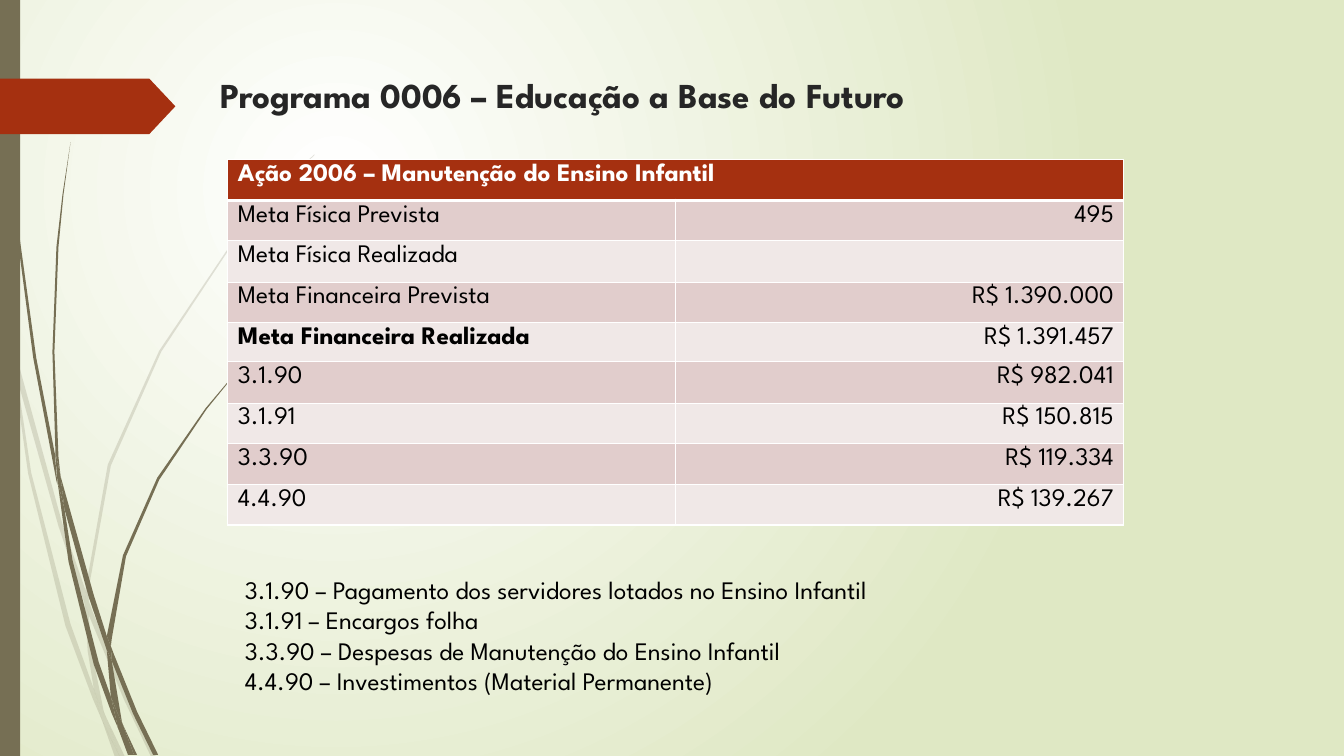
from pptx import Presentation
from pptx.dml.color import RGBColor
from pptx.enum.shapes import MSO_SHAPE as SHAPE
from pptx.enum.text import MSO_ANCHOR as ANCHOR, MSO_AUTO_SIZE as AUTO_SIZE, PP_ALIGN as ALIGN
from pptx.oxml.ns import qn
from pptx.util import Pt
from lxml import etree

PX = 9144  # 100 px to the inch
FONT = "League Spartan"
COLORS = {
    "white": "FFFFFF", "pale green": "DFE8C4", "olive": "766F54", "rust": "A53010",
    "title": "262626", "black": "000000", "band dark": "E1CDCC", "band light": "F0E8E7",
}


def write(para, text, color, size=18, bold=False, align=ALIGN.LEFT):
    para.alignment = align
    span = para.add_run()
    span.text = text
    span.font.color.rgb = RGBColor.from_string(COLORS[color])
    for name, value in {"name": FONT, "size": Pt(size), "bold": bold}.items():
        setattr(span.font, name, value)


def paint(shape, color):
    shape.shadow.inherit = False
    shape.fill.solid()
    shape.fill.fore_color.rgb = RGBColor.from_string(COLORS[color])
    shape.line.fill.background()


deck = Presentation()
deck.slide_width, deck.slide_height = 12192000, 750 * PX
page = deck.slides.add_slide(deck.slide_layouts[5])

# Background: white glow fading to pale green
backdrop = page.background.fill
backdrop.gradient()
for stop, color in zip(backdrop.gradient_stops, ("white", "pale green")):
    stop.color.rgb = RGBColor.from_string(COLORS[color])
gradient = next(page.element.iter(qn("a:gradFill")))
gradient.remove(gradient.find(qn("a:lin")))
glow = etree.SubElement(gradient, qn("a:path"), path="circle")
etree.SubElement(glow, qn("a:fillToRect"), l="50000", t="50000", r="100000", b="100000")

# Grass: each tuft is made of leaf pieces, given as outline corners
faint_tuft = [
    [(11, 350), (9, 322), (0, 282), (0, 299), (10, 344)],
    [(58, 522), (84, 599), (85, 586), (62, 520), (14, 345), (17, 376)],
    [(92, 607), (88, 596), (88, 610), (123, 694), (150, 751), (155, 751), (127, 692)],
    [(119, 751), (124, 751), (105, 711)],
    [(93, 683), (70, 619), (31, 469), (17, 376), (11, 350), (28, 470), (65, 621), (92, 693),
     (101, 714), (99, 707)],
    [(84, 599), (87, 646), (93, 683), (96, 692), (105, 711), (103, 706), (91, 646), (88, 610),
     (88, 608)],
    [(88, 584), (110, 462), (160, 349), (229, 245), (268, 198), (290, 175), (312, 154),
     (312, 153), (289, 175), (268, 197), (228, 244), (158, 348), (107, 461), (85, 584),
     (85, 586), (88, 596)],
    [(101, 714), (114, 751), (119, 751)],
    [(88, 608), (88, 610), (88, 596), (85, 586), (84, 599)],
    [(96, 692), (93, 683), (99, 707), (101, 714), (119, 751), (105, 711)],
]
dark_tuft = [
    [(7, 110), (17, 233), (33, 355), (56, 477), (57, 481), (55, 457), (55, 453), (36, 355),
     (19, 232), (8, 109), (5, 48), (4, 0), (3, 0), (4, 48)],
    [(88, 592), (106, 645), (106, 633), (106, 631), (93, 590), (60, 472), (64, 505)],
    [(113, 649), (110, 641), (111, 656), (132, 708), (152, 749), (157, 749), (136, 706)],
    [(110, 691), (98, 657), (72, 556), (64, 505), (57, 477), (68, 557), (93, 659), (111, 708),
     (117, 722), (116, 717)],
    [(60, 472), (58, 453), (54, 349), (58, 245), (63, 193), (70, 141), (62, 193), (56, 245),
     (52, 349), (55, 449)],
    [(133, 749), (136, 749), (122, 719)],
    [(57, 477), (64, 505), (60, 472), (55, 449), (55, 453)],
    [(111, 633), (125, 552), (158, 476), (205, 406), (231, 374), (245, 359), (261, 344),
     (260, 344), (245, 358), (231, 373), (204, 405), (156, 474), (122, 551), (106, 631),
     (110, 641)],
    [(117, 722), (127, 749), (131, 749)],
    [(106, 645), (110, 691), (116, 706), (122, 719), (121, 716), (111, 656), (109, 651)],
    [(106, 645), (109, 651), (111, 656), (110, 641), (106, 631), (106, 633)],
    [(116, 706), (110, 691), (116, 717), (117, 722), (130, 749), (133, 749), (122, 719)],
]
for opacity, tuft in ((20, faint_tuft), (100, dark_tuft)):
    group = page.shapes.add_group_shape()
    for corners in tuft:
        builder = group.shapes.build_freeform(*corners[0], scale=PX)
        builder.add_line_segments(corners[1:], close=True)
        leaf = builder.convert_to_shape()
        paint(leaf, "olive")
        if opacity < 100:
            tint = leaf.element.spPr.find(qn("a:solidFill"))[0]
            etree.SubElement(tint, qn("a:alpha"), val=str(opacity * 1000))

# Side bar and arrow
bar = page.shapes.add_shape(SHAPE.RECTANGLE, 0, 0, 20 * PX, 750 * PX)
paint(bar, "olive")
arrow = page.shapes.add_shape(SHAPE.PENTAGON, 0, 78 * PX, 174 * PX, 55 * PX)
arrow.adjustments[0] = 0.47
paint(arrow, "rust")

# Title
title = page.shapes.title
for name, value in {"left": 209, "top": 68, "width": 1049, "height": 69}.items():
    setattr(title, name, value * PX)
frame = title.text_frame
for name, value in {"word_wrap": True, "auto_size": AUTO_SIZE.NONE,
                    "vertical_anchor": ANCHOR.TOP}.items():
    setattr(frame, name, value)
write(frame.paragraphs[0], "Programa 0006 – Educação a Base do Futuro", "title", 25, True)

# Goals table
goals = [
    ("Ação 2006 – Manutenção do Ensino Infantil", ""),
    ("Meta Física Prevista", "495"),
    ("Meta Física Realizada", ""),
    ("Meta Financeira Prevista", "R$ 1.390.000"),
    ("Meta Financeira Realizada", "R$ 1.391.457"),
    ("3.1.90", "R$ 982.041"),
    ("3.1.91", "R$ 150.815"),
    ("3.3.90", "R$ 119.334"),
    ("4.4.90", "R$ 139.267"),
]
row_heights = [41, 40, 41, 40, 39, 41, 40, 41, 40]
table = page.shapes.add_table(len(goals), 2, 226 * PX, 158 * PX, 889 * PX,
                              sum(row_heights) * PX).table
table.cell(0, 0).merge(table.cell(0, 1))
for row, (texts, height) in enumerate(zip(goals, row_heights)):
    table.rows[row].height = height * PX
    band = "rust" if row == 0 else "band dark" if row % 2 else "band light"
    for column, text in enumerate(texts):
        cell = table.cell(row, column)
        cell.fill.solid()
        cell.fill.fore_color.rgb = RGBColor.from_string(COLORS[band])
        para = cell.text_frame.paragraphs[0]
        para.line_spacing = 0.9
        if text:
            write(para, text, "black" if row else "white",
                  bold=column == 0 and row in (0, 4),
                  align=ALIGN.RIGHT if column else ALIGN.LEFT)
        widths = {"lnL": 1, "lnR": 1, "lnT": 3 if row == 1 else 1, "lnB": 1 if row else 3}
        for index, (side, width) in enumerate(widths.items()):
            border = etree.Element(qn(f"a:{side}"), w=str(Pt(width)))
            stroke = etree.SubElement(border, qn("a:solidFill"))
            etree.SubElement(stroke, qn("a:srgbClr"), val=COLORS["white"])
            cell._tc.get_or_add_tcPr().insert(index, border)

# Legend of expense codes
legend = [
    "3.1.90 – Pagamento dos servidores lotados no Ensino Infantil",
    "3.1.91 – Encargos folha",
    "3.3.90 – Despesas de Manutenção do Ensino Infantil",
    "4.4.90 – Investimentos (Material Permanente)",
]
box = page.shapes.add_textbox(233 * PX, 565 * PX, 881 * PX, 131 * PX)
box.text_frame.word_wrap = True
box.text_frame.auto_size = AUTO_SIZE.SHAPE_TO_FIT_TEXT
for index, line in enumerate(legend):
    para = box.text_frame.add_paragraph() if index else box.text_frame.paragraphs[0]
    write(para, line, "black")

deck.save("out.pptx")
